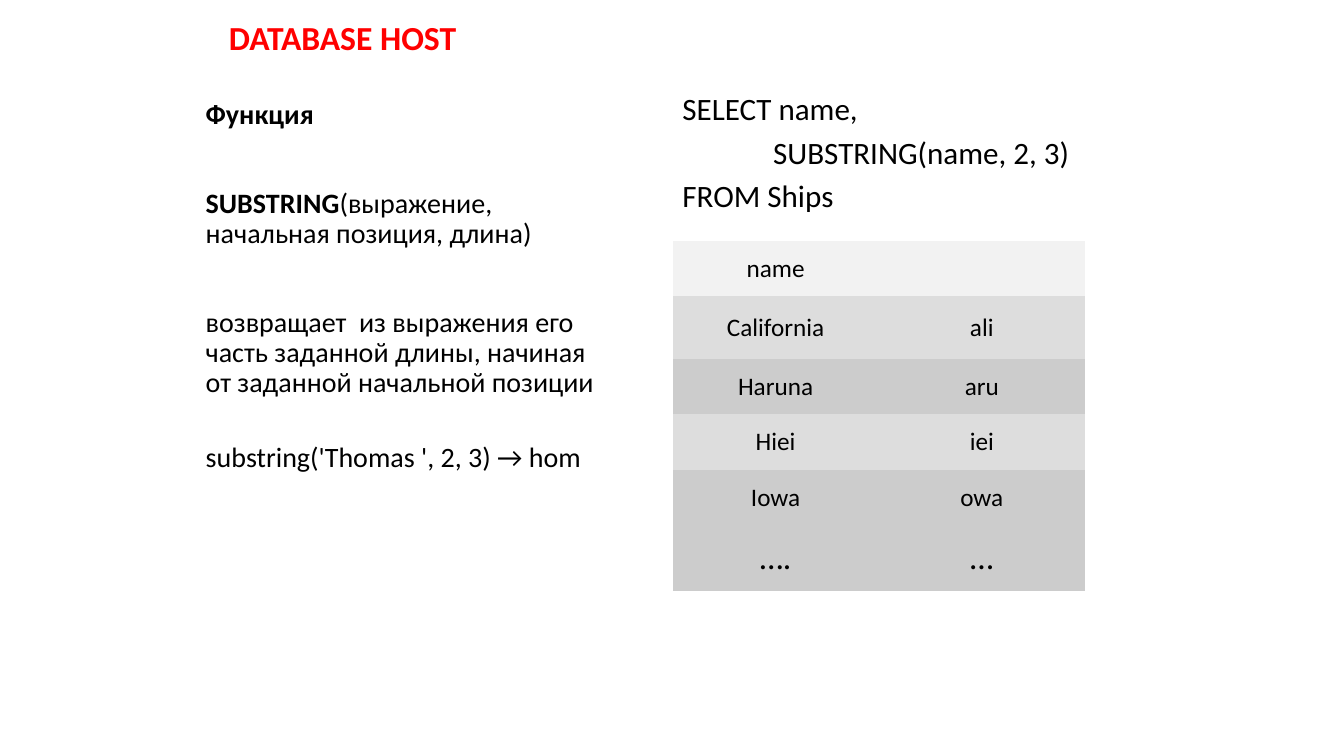
from dataclasses import dataclass

from pptx import Presentation
from pptx import util as u
from pptx.dml.color import RGBColor
from pptx.enum import text as t
from pptx.oxml import ns, xmlchemy as xc


@dataclass(frozen=True)
class Theme:
    font: str = "Calibri"
    ink: str = "000000"
    red: str = "FF0000"
    head: str = "F2F2F2"
    light: str = "DDDDDD"
    dark: str = "CCCCCC"
    title: float = 24
    body: float = 20
    code: float = 22.2
    cell: float = 18
    dots: float = 24
    plain: str = "{2D5ABB26-0587-4C30-8999-92F81FD0307C}"


LOOK = Theme()


@dataclass(frozen=True)
class Run:
    text: str
    bold: bool = False


@dataclass(frozen=True)
class Para:
    runs: tuple[Run, ...]
    before: float = 0
    indent: float = 0
    line: float = 1


@dataclass(frozen=True)
class Row:
    cells: tuple[str, str]
    fill: str
    high: float = 0.55
    size: float = LOOK.cell


TITLE = (Para((Run("DATABASE HOST", True),)),)
BODY = (
    Para((Run("Функция", True),), 0, line=0.9),
    Para((Run("SUBSTRING", True), Run("(выражение, начальная позиция, длина)")), 42, line=0.9),
    Para((Run("возвращает  из выражения его часть заданной длины, "
              "начиная от заданной начальной позиции"),), 42, line=0.9),
    Para((Run("substring('Thomas ', 2, 3) → hom"),), 32, line=0.9),
)
CODE = (
    Para((Run("SELECT name,"),), 4.4),
    Para((Run("SUBSTRING(name, 2, 3)"),), 4.4, 0.9),
    Para((Run("FROM Ships"),), 4.4),
)
ROWS = (
    Row(("name", ""), LOOK.head),
    Row(("California", "ali"), LOOK.light, 0.62),
    Row(("Haruna", "aru"), LOOK.dark),
    Row(("Hiei", "iei"), LOOK.light),
    Row(("Iowa", "owa"), LOOK.dark),
    Row(("….", "…"), LOOK.dark, 0.65, LOOK.dots),
)


def place(shape, left: float, top: float, wide: float, high: float) -> None:
    """Move and size a shape in inches."""
    shape.left, shape.top = u.Inches(left), u.Inches(top)
    shape.width, shape.height = u.Inches(wide), u.Inches(high)


def write(frame, paras: tuple[Para, ...], size: float, color: str = LOOK.ink,
          align=t.PP_ALIGN.LEFT) -> None:
    """Fill a text frame run by run, without bullets."""
    frame.word_wrap = True
    for num, item in enumerate(paras):
        para = frame.add_paragraph() if num else frame.paragraphs[0]
        para.alignment, para.line_spacing = align, item.line
        para.space_before = u.Pt(item.before)
        props = para._p.get_or_add_pPr()
        props.set("marL", str(u.Inches(item.indent)))
        props.set("indent", "0")
        props.append(xc.OxmlElement("a:buNone"))
        for part in item.runs:
            run = para.add_run()
            run.text = part.text
            run.font.name, run.font.size = LOOK.font, u.Pt(size)
            run.font.bold = part.bold
            run.font.color.rgb = RGBColor.from_string(color)


def grid(slide, rows: tuple[Row, ...]) -> None:
    """Draw the table of query results."""
    frame = slide.shapes.add_table(
        len(rows), 2, u.Inches(6.67), u.Inches(2.39), u.Inches(4.09),
        u.Inches(sum(row.high for row in rows)))
    table = frame.table
    table._tbl.tblPr.find(ns.qn("a:tableStyleId")).text = LOOK.plain
    for y, row in enumerate(rows):
        table.rows[y].height = u.Inches(row.high)
        for x, word in enumerate(row.cells):
            cell = table.cell(y, x)
            cell.fill.solid()
            cell.fill.fore_color.rgb = RGBColor.from_string(row.fill)
            cell.vertical_anchor = t.MSO_ANCHOR.MIDDLE
            cell.margin_left = cell.margin_right = u.Inches(0.05)
            cell.margin_top = cell.margin_bottom = u.Inches(0.05)
            if word:
                write(cell.text_frame, (Para((Run(word),)),), row.size,
                      align=t.PP_ALIGN.CENTER)


def main() -> None:
    """Build and save the slide."""
    deck = Presentation()
    deck.slide_width, deck.slide_height = u.Inches(13.33), u.Inches(7.5)
    slide = deck.slides.add_slide(deck.slide_layouts[1])

    title, body = slide.shapes.title, slide.placeholders[1]
    place(title, 2.17, 0.17, 3.17, 0.4)
    title.text_frame.vertical_anchor = t.MSO_ANCHOR.MIDDLE
    write(title.text_frame, TITLE, LOOK.title, LOOK.red)
    place(body, 1.94, 0.94, 4.25, 5.09)
    write(body.text_frame, BODY, LOOK.body)
    for shape in (title, body):
        shape.text_frame.auto_size = t.MSO_AUTO_SIZE.NONE

    code = slide.shapes.add_textbox(0, 0, 0, 0)
    place(code, 6.67, 0.84, 4.49, 1.16)
    write(code.text_frame, CODE, LOOK.code)
    grid(slide, ROWS)
    deck.save("out.pptx")


if __name__ == "__main__":
    main()
